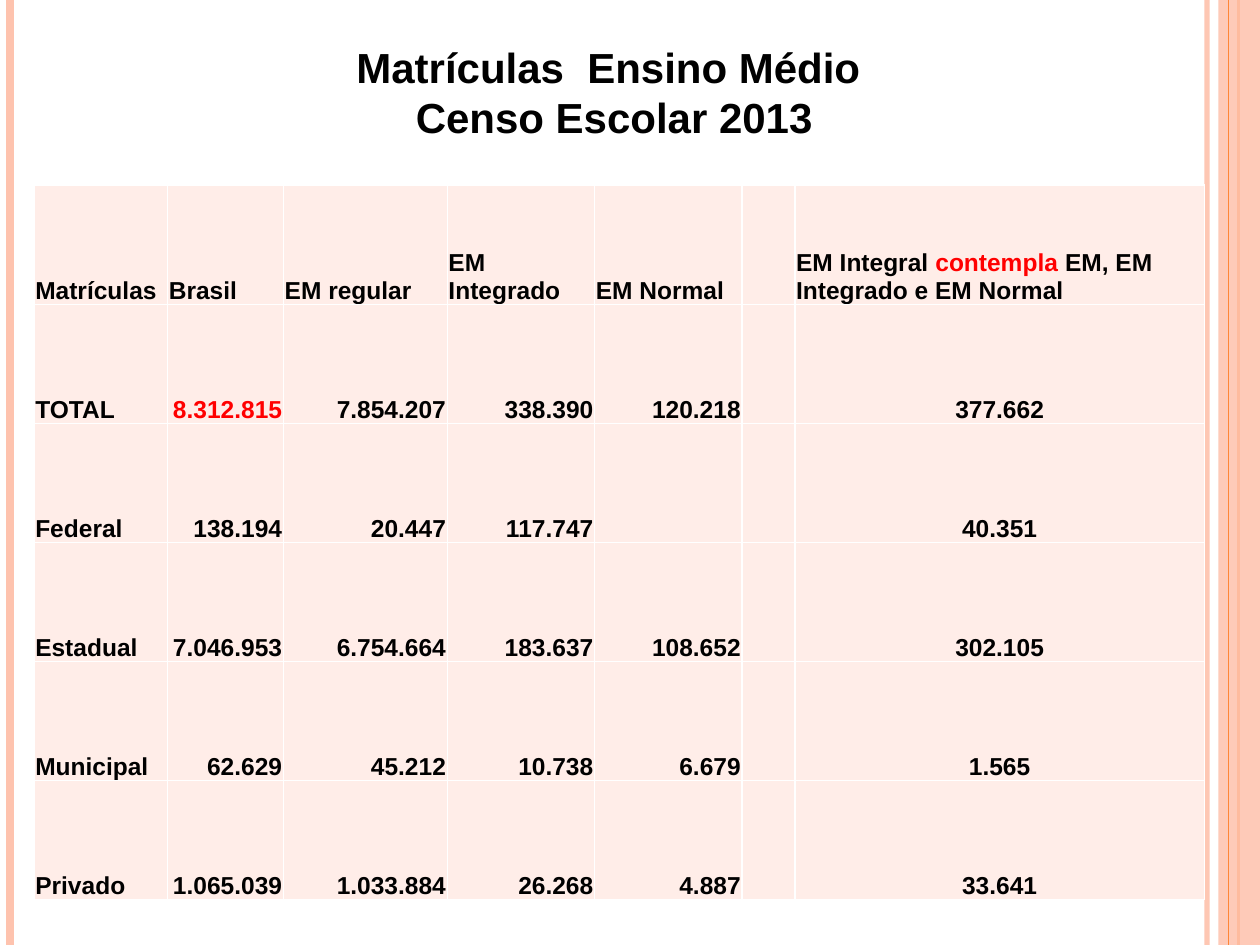
from dataclasses import dataclass

from lxml import etree
from pptx import Presentation
from pptx.dml.color import RGBColor
from pptx.enum.shapes import MSO_CONNECTOR, MSO_SHAPE
from pptx.enum.text import MSO_ANCHOR, PP_ALIGN
from pptx.oxml.ns import qn
from pptx.util import Inches, Pt

STRAIGHT = MSO_CONNECTOR.STRAIGHT
RECT = MSO_SHAPE.RECTANGLE
BOTTOM = MSO_ANCHOR.BOTTOM
LEFT, CENTER, RIGHT = PP_ALIGN.LEFT, PP_ALIGN.CENTER, PP_ALIGN.RIGHT

BLACK, RED, WHITE = "000000", "FF0000", "FFFFFF"
PEACH, ORANGE, CELL_FILL = "FEC3AE", "FE8637", "FFEDE8"
SLIDE_W, SLIDE_H = 10, 7.5


@dataclass
class Stripe:
    x: float
    color: str
    width: float
    alpha: int = 100


@dataclass
class Run:
    text: str
    color: str = BLACK


BACK_STRIPES = [
    Stripe(9.58, PEACH, 3, 93),
    Stripe(0.08, PEACH, 4.5),
    Stripe(9.83, ORANGE, 1.5),
]
FRONT_STRIPE = Stripe(9.75, ORANGE, 0.75)

TITLE = ["Matrículas  Ensino Médio ", "Censo Escolar 2013"]

COL_WIDTHS = [1.06, 0.92, 1.3, 1.17, 1.17, 0.42, 3.25]
COL_ALIGN = [LEFT] + [RIGHT] * 5 + [CENTER]
ROWS = [
    ["Matrículas", "Brasil", "EM regular", "EM Integrado", "EM Normal", "",
     [Run("EM Integral "), Run("contempla", RED),
      Run(" EM, EM Integrado e EM Normal")]],
    ["TOTAL", [Run("8.312.815", RED)], "7.854.207", "338.390", "120.218", "", "377.662"],
    ["Federal", "138.194", "20.447", "117.747", "", "", "40.351"],
    ["Estadual", "7.046.953", "6.754.664", "183.637", "108.652", "", "302.105"],
    ["Municipal", "62.629", "45.212", "10.738", "6.679", "", "1.565"],
    ["Privado", "1.065.039", "1.033.884", "26.268", "4.887", "", "33.641"],
]
CELL_FORMAT = {
    "margin_left": Inches(0.01),
    "margin_right": Inches(0.01),
    "margin_top": Inches(0.01),
    "margin_bottom": 0,
    "vertical_anchor": BOTTOM,
}


def rgb(color: str) -> RGBColor:
    return RGBColor.from_string(color)


def set_alpha(element, percent: int) -> None:
    clr = next(element.iter(qn("a:srgbClr")))
    etree.SubElement(clr, qn("a:alpha"), val=str(percent * 1000))


def add_stripe(slide, stripe: Stripe) -> None:
    x = Inches(stripe.x)
    cn = slide.shapes.add_connector(STRAIGHT, x, 0, x, Inches(SLIDE_H))
    cn.line.color.rgb = rgb(stripe.color)
    cn.line.width = Pt(stripe.width)
    sp_pr = cn._element.spPr
    if stripe.alpha < 100:
        set_alpha(sp_pr, stripe.alpha)
    etree.SubElement(sp_pr, qn("a:effectLst"))


def add_band(slide, x: float, width: float, color: str, alpha: int) -> None:
    sp = slide.shapes.add_shape(RECT, Inches(x), 0, Inches(width), Inches(SLIDE_H))
    sp.shadow.inherit = False
    sp.fill.solid()
    sp.fill.fore_color.rgb = rgb(color)
    sp.line.fill.background()
    set_alpha(sp._element.spPr, alpha)


def write(p, runs: list[Run], size: float, align) -> None:
    p.alignment = align
    for run in runs:
        r = p.add_run()
        r.text = run.text
        fmt = {"name": "Arial", "size": Pt(size), "bold": True}
        for key, value in fmt.items():
            setattr(r.font, key, value)
        r.font.color.rgb = rgb(run.color)


def set_borders(cell, color: str, width: float) -> None:
    tc_pr = cell._tc.get_or_add_tcPr()
    # Borders come before the fill in the cell properties
    for i, side in enumerate(("lnL", "lnR", "lnT", "lnB")):
        ln = etree.Element(qn(f"a:{side}"), w=str(Pt(width)))
        fill = etree.SubElement(ln, qn("a:solidFill"))
        etree.SubElement(fill, qn("a:srgbClr"), val=color)
        tc_pr.insert(i, ln)


def add_enrolment_table(slide, x: float, y: float, height: float) -> None:
    frame = slide.shapes.add_table(len(ROWS), len(COL_WIDTHS), Inches(x), Inches(y),
                                   Inches(sum(COL_WIDTHS)), Inches(height))
    table = frame.table
    table.first_row = table.horz_banding = False
    for col, width in zip(table.columns, COL_WIDTHS):
        col.width = Inches(width)
    for i, values in enumerate(ROWS):
        table.rows[i].height = Inches(height / len(ROWS))
        for j, value in enumerate(values):
            cell = table.cell(i, j)
            for key, setting in CELL_FORMAT.items():
                setattr(cell, key, setting)
            cell.fill.solid()
            cell.fill.fore_color.rgb = rgb(CELL_FILL)
            set_borders(cell, WHITE, 1)
            if value:
                runs = [Run(value)] if isinstance(value, str) else value
                align = LEFT if i == 0 else COL_ALIGN[j]
                write(cell.text_frame.paragraphs[0], runs, 14, align)


def add_title(slide) -> None:
    s = slide.shapes.add_textbox(Inches(1.61), Inches(0.28), Inches(6.53), Inches(0.91))
    tf = s.text_frame
    tf.word_wrap = True
    for i, line in enumerate(TITLE):
        p = tf.add_paragraph() if i else tf.paragraphs[0]
        write(p, [Run(line)], 24, CENTER)


def main() -> None:
    prs = Presentation()
    prs.slide_width, prs.slide_height = Inches(SLIDE_W), Inches(SLIDE_H)
    slide = prs.slides.add_slide(prs.slide_layouts[6])

    # Side stripes
    for stripe in BACK_STRIPES:
        add_stripe(slide, stripe)
    add_band(slide, 9.67, 0.33, PEACH, 87)
    add_stripe(slide, FRONT_STRIPE)

    # Enrolment table and title
    add_enrolment_table(slide, 0.27, 1.47, 5.67)
    add_title(slide)

    prs.save("out.pptx")


if __name__ == "__main__":
    main()
